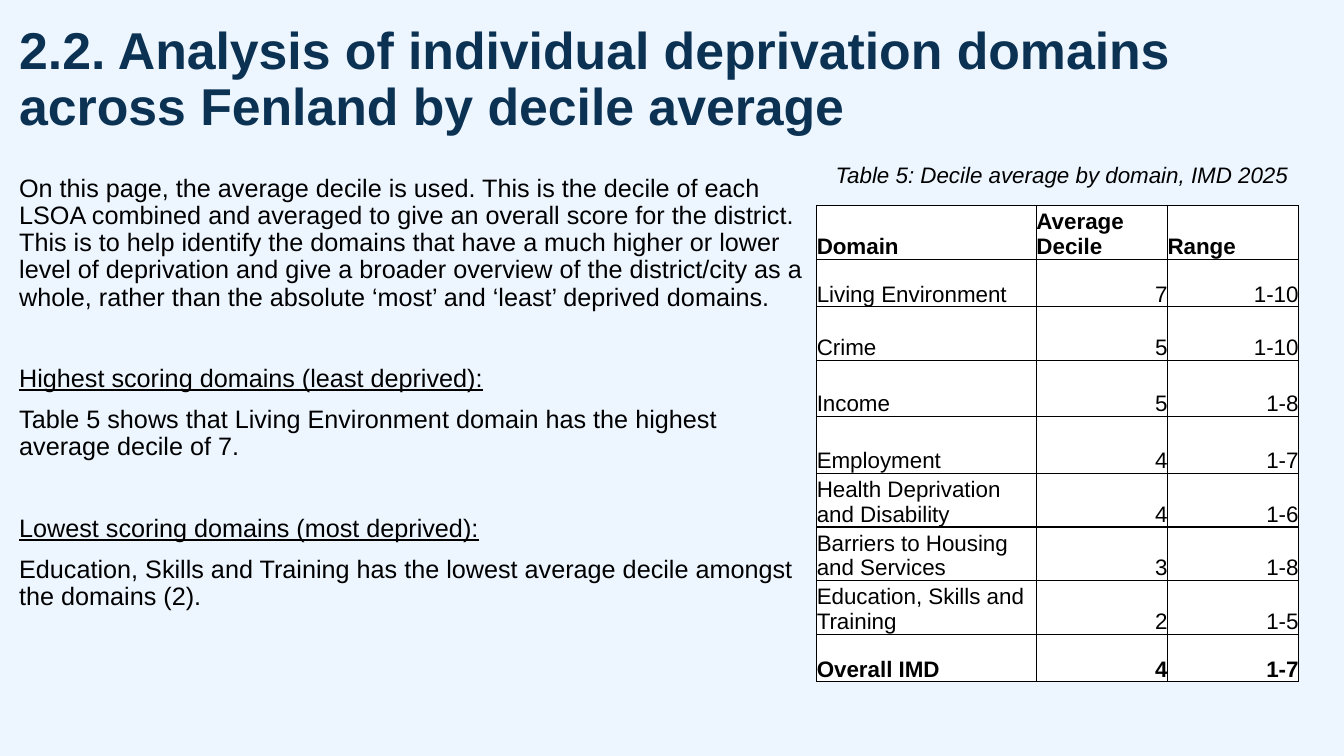
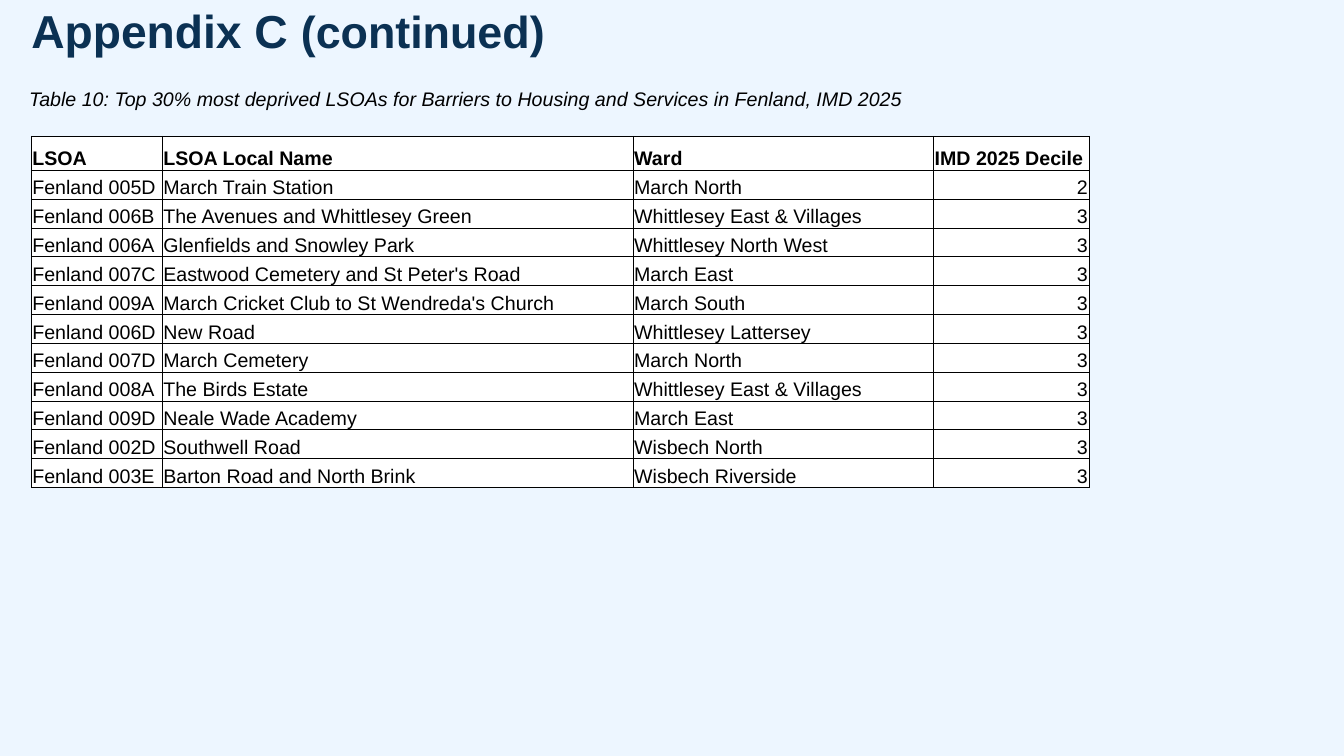
from pptx import Presentation
from pptx.dml.color import RGBColor as RGB
from pptx.enum.text import MSO_ANCHOR as ANCHOR, MSO_AUTO_SIZE as FIT, PP_ALIGN as ALIGN
from pptx.oxml import parse_xml
from pptx.oxml.ns import nsdecls
from pptx.util import Inches, Pt

THEME = {
    "font": "Arial", "back": "EDF6FF", "navy": "0B3153", "ink": "000000", "cell": "FFFFFF",
    "lead": 37, "head": 33, "side": 32, "body": 18, "large": 16, "small": 14,
}
INK = RGB.from_string(THEME["ink"])
TITLE = {"bold": True, "color": RGB.from_string(THEME["navy"])}
PLAIN = {"bold": False}
BOLD = {"bold": True}

deck = Presentation()
deck.slide_width, deck.slide_height = Inches(13.33), Inches(7.5)
COL, ROW = deck.slide_width / 100, deck.slide_height / 100
back = deck.slide_master.background.fill
back.solid()
back.fore_color.rgb = RGB.from_string(THEME["back"])


def write(para, text, size, look, **form):
    """Add one run; look holds font values, form holds paragraph values."""
    for name, value in form.items():
        setattr(para, name, value)
    font = para.add_run().font
    para.runs[-1].text = text
    font.color.rgb = look.get("color", INK)
    for name, value in {"name": THEME["font"], "size": Pt(size), **look}.items():
        if name != "color":
            setattr(font, name, value)


def place(shape, x, y, w, h, inset=True):
    """Set place and size in hundredths of the slide, and the frame's wrapping."""
    shape.left, shape.top = round(x * COL), round(y * ROW)
    shape.width, shape.height = round(w * COL), round(h * ROW)
    frame = shape.text_frame
    frame.word_wrap = True
    if not inset:
        for side in ("left", "top", "right", "bottom"):
            setattr(frame, f"margin_{side}", 0)
    return frame


PAGES = [
    {
        "title": [("2.2. Analysis of individual deprivation domains "
                   "across Fenland by decile average", THEME["lead"])],
        "head": (1.43, 3.33, 86.27, 17.73),
        "label": "Table 5: Decile average by domain, IMD 2025",
        "note": (61.44, 20.67, 37.51, 4.93),
        "size": THEME["large"], "line": 1, "pad": 0, "space": 1.0,
        "at": (60.77, 27.2),
        "cols": [16.35, 9.75, 9.75],
        "rows": [7.07, 6.27, 7.07, 7.47, 7.47] + [6.27] * 4,
        "right": 1, "total": True,
        "cells": [
            ("Domain", "Average Decile", "Range"),
            ("Living Environment", "7", "1-10"),
            ("Crime", "5", "1-10"),
            ("Income", "5", "1-8"),
            ("Employment", "4", "1-7"),
            ("Health Deprivation and Disability", "4", "1-6"),
            ("Barriers to Housing and Services", "3", "1-8"),
            ("Education, Skills and Training", "2", "1-5"),
            ("Overall IMD", "4", "1-7"),
        ],
        "body": [
            ("On this page, the average decile is used. This is the decile of each LSOA "
             "combined and averaged to give an overall score for the district. This is to "
             "help identify the domains that have a much higher or lower level of "
             "deprivation and give a broader overview of the district/city as a whole, "
             "rather than the absolute ‘most’ and ‘least’ deprived domains.", False, 0),
            ("Highest scoring domains (least deprived):", True, 38.6),
            ("Table 5 shows that Living Environment domain has the highest average "
             "decile of 7.", False, 10),
            ("Lowest scoring domains (most deprived):", True, 38.6),
            ("Education, Skills and Training has the lowest average decile amongst "
             "the domains (2).", False, 10),
        ],
    },
    {
        "title": [("Appendix C ", THEME["head"]), ("(continued)", THEME["side"])],
        "head": (2.33, 1.07, 43.44, 11.87),
        "label": "Table 10: Top 30% most deprived LSOAs for Barriers to Housing "
                 "and Services in Fenland, IMD 2025",
        "note": (1.43, 10.8, 79.52, 4.53),
        "size": THEME["small"], "line": 0.5, "pad": 0.01, "space": 1.5,
        "at": (2.33, 18),
        "cols": [9.75, 35.03, 22.36, 11.55],
        "rows": [3.82] * 12,
        "right": 3, "total": False,
        "cells": [
            ("LSOA", "LSOA Local Name", "Ward", "IMD 2025 Decile"),
            ("Fenland 005D", "March Train Station", "March North", "2"),
            ("Fenland 006B", "The Avenues and Whittlesey Green", "Whittlesey East & Villages", "3"),
            ("Fenland 006A", "Glenfields and Snowley Park", "Whittlesey North West", "3"),
            ("Fenland 007C", "Eastwood Cemetery and St Peter's Road", "March East", "3"),
            ("Fenland 009A", "March Cricket Club to St Wendreda's Church", "March South", "3"),
            ("Fenland 006D", "New Road", "Whittlesey Lattersey", "3"),
            ("Fenland 007D", "March Cemetery", "March North", "3"),
            ("Fenland 008A", "The Birds Estate", "Whittlesey East & Villages", "3"),
            ("Fenland 009D", "Neale Wade Academy", "March East", "3"),
            ("Fenland 002D", "Southwell Road", "Wisbech North", "3"),
            ("Fenland 003E", "Barton Road and North Brink", "Wisbech Riverside", "3"),
        ],
        "body": [],
    },
]

for page in PAGES:
    slide = deck.slides.add_slide(deck.slide_layouts[5])
    shapes = slide.shapes

    frame = place(shapes.title, *page["head"], inset=False)
    frame.vertical_anchor = ANCHOR.TOP
    frame.auto_size = FIT.NONE
    for text, size in page["title"]:
        write(frame.paragraphs[0], text, size, TITLE,
              alignment=ALIGN.LEFT, line_spacing=0.9, space_after=Pt(6))

    if page["body"]:
        frame = place(shapes.add_textbox(0, 0, 0, 0), 1.43, 23.2, 58.29, 66.8, inset=False)
        for num, (text, under, gap) in enumerate(page["body"]):
            para = frame.add_paragraph() if num else frame.paragraphs[0]
            write(para, text, THEME["body"], {"underline": under},
                  line_spacing=0.9, space_before=Pt(gap))

    x, y = page["at"]
    cells, cols, rows = page["cells"], page["cols"], page["rows"]
    table = shapes.add_table(len(rows), len(cols), round(x * COL), round(y * ROW),
                             round(sum(cols) * COL), round(sum(rows) * ROW)).table
    table.first_row = table.horz_banding = False
    for col, width in zip(table.columns, cols):
        col.width = round(width * COL)
    for row, height in zip(table.rows, rows):
        row.height = round(height * ROW)

    pad = Inches(page["pad"])
    form = {"margin_left": pad, "margin_top": pad, "margin_right": pad,
            "margin_bottom": 0, "vertical_anchor": ANCHOR.BOTTOM}
    for r, line in enumerate(cells):
        strong = r == 0 or (page["total"] and r == len(cells) - 1)
        for c, text in enumerate(line):
            cell = table.cell(r, c)
            for name, value in form.items():
                setattr(cell, name, value)
            write(cell.text_frame.paragraphs[0], text, page["size"], BOLD if strong else PLAIN,
                  alignment=ALIGN.RIGHT if r and c >= page["right"] else ALIGN.LEFT,
                  line_spacing=1.0 if r else page["space"])
            props = cell._tc.get_or_add_tcPr()
            for edge in ("lnL", "lnR", "lnT", "lnB"):
                props.append(parse_xml(
                    f'<a:{edge} {nsdecls("a")} w="{Pt(page["line"])}"><a:solidFill>'
                    f'<a:srgbClr val="{THEME["ink"]}"/></a:solidFill></a:{edge}>'))
            cell.fill.solid()
            cell.fill.fore_color.rgb = RGB.from_string(THEME["cell"])

    frame = place(shapes.add_textbox(0, 0, 0, 0), *page["note"])
    frame.auto_size = FIT.SHAPE_TO_FIT_TEXT
    write(frame.paragraphs[0], page["label"], page["size"], {"italic": True})

deck.save("out.pptx")
